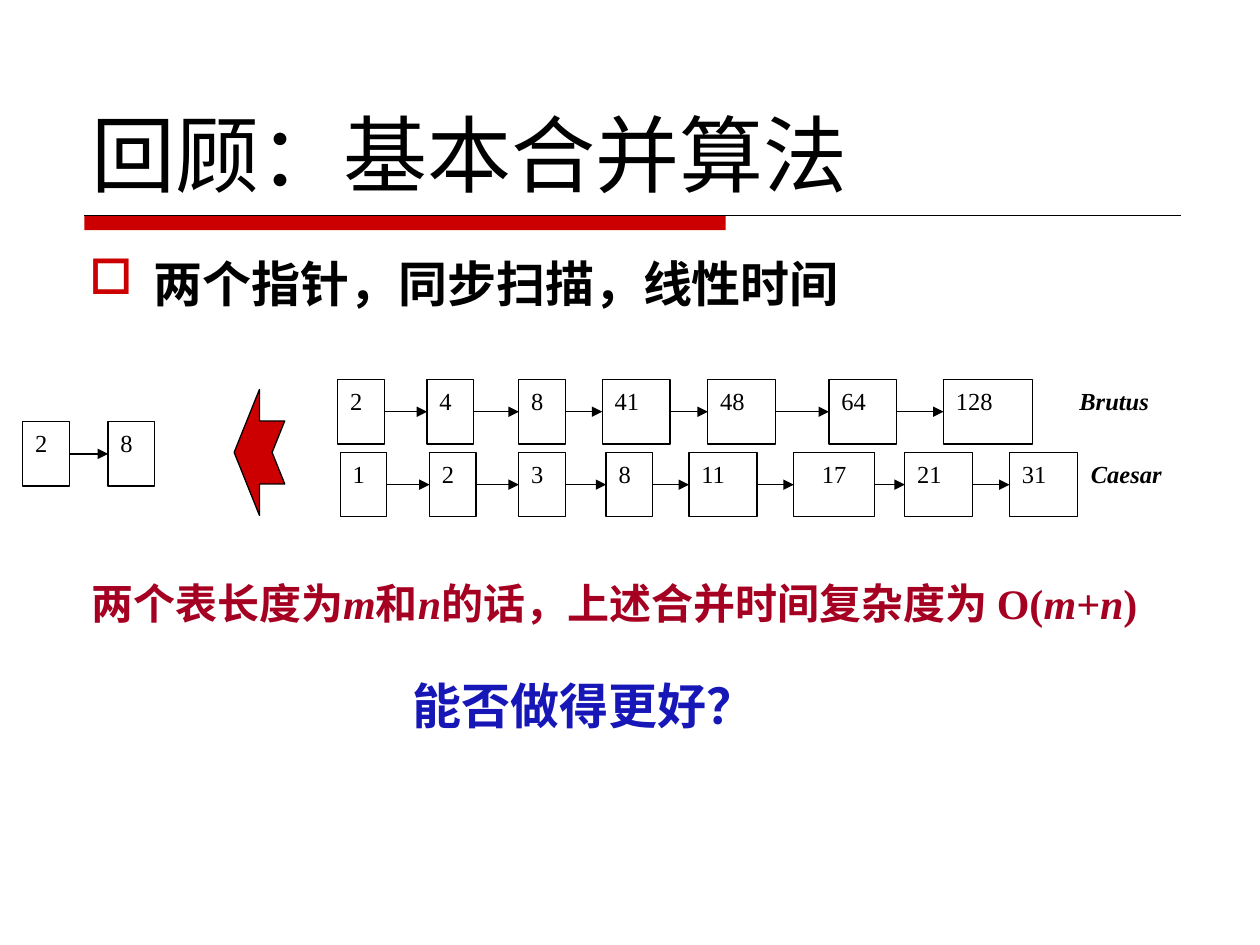
from lxml.etree import SubElement
from pptx import Presentation
from pptx.dml.color import RGBColor
from pptx.enum.shapes import MSO_CONNECTOR as CONN, MSO_SHAPE as SHAPE
from pptx.enum.text import MSO_ANCHOR as ANCHOR, PP_ALIGN as ALIGN
from pptx.oxml.ns import qn
from pptx.util import Cm, Pt

SANS, SERIF = "DejaVu Sans", "Times New Roman"
BLACK, RED, CRIMSON, BLUE = "000000", "CC0000", "A50021", "1717B7"
NODE_H = 1.3
NARROW, MEDIUM, WIDE = 0.94, 1.37, 1.8


def color(hex_value):
    return RGBColor.from_string(hex_value)


def write(tf, runs, size, font=SERIF, fill=BLACK, bold=False, align=ALIGN.LEFT):
    """Fill the first paragraph with (text, italic) runs."""
    tf.word_wrap = True
    p = tf.paragraphs[0]
    p.alignment = align
    for text, italic in runs:
        r = p.add_run()
        r.text = text
        f = r.font
        f.name, f.size, f.bold, f.italic = font, Pt(size), bold, italic
        f.color.rgb = color(fill)
    return p


def add_text(s, box, runs, size, anchor=ANCHOR.TOP, **style):
    tf = s.shapes.add_textbox(*map(Cm, box)).text_frame
    tf.vertical_anchor = anchor
    return write(tf, runs, size, **style)


def add_box(s, kind, box, fill=None, line=BLACK):
    sp = s.shapes.add_shape(kind, *map(Cm, box))
    sp.shadow.inherit = False
    if fill:
        sp.fill.solid()
        sp.fill.fore_color.rgb = color(fill)
    else:
        sp.fill.background()
    if line:
        sp.line.color.rgb = color(line)
        sp.line.width = Pt(0.75)
    else:
        sp.line.fill.background()
    return sp


def add_line(s, x1, y1, x2, y2, width=0.75):
    cxn = s.shapes.add_connector(CONN.STRAIGHT, x1, y1, x2, y2)
    cxn.line.color.rgb = color(BLACK)
    cxn.line.width = Pt(width)
    SubElement(cxn._element.spPr, qn("a:effectLst"))
    return cxn


def link(s, a, b):
    """Join two neighbouring nodes with an arrow."""
    cxn = add_line(s, 0, 0, 0, 0)
    cxn.begin_connect(a, 3)
    cxn.end_connect(b, 1)
    SubElement(cxn.line._get_or_add_ln(), qn("a:tailEnd"), type="triangle")


def add_title(s, left, top, width, height):
    add_text(s, (left, top, width, height), [("回顾：基本合并算法", False)], 48,
             anchor=ANCHOR.BOTTOM, font=SANS)
    rule_x, rule_y = left + 0.1, top + 3.5
    add_box(s, SHAPE.RECTANGLE, (rule_x, rule_y, 12.93, 0.3), RED, None)
    add_line(s, Cm(rule_x), Cm(rule_y), Cm(rule_x + 22.1), Cm(rule_y), 0.5)


def add_bullet(s, box):
    p = add_text(s, box, [("两个指针，同步扫描，线性时间", False)], 28,
                 font=SANS, bold=True)
    p.space_before = Pt(5.6)
    pPr = p._p.get_or_add_pPr()
    pPr.set("marL", str(Cm(1.3)))
    pPr.set("indent", str(-Cm(1.3)))
    SubElement(SubElement(pPr, qn("a:buClr")), qn("a:srgbClr"), val=RED)
    SubElement(pPr, qn("a:buChar"), char="□")


def add_list(s, left, top, nodes, label=None):
    """Draw a linked list of (offset, width, value) nodes."""
    previous = None
    for offset, width, value in nodes:
        sp = add_box(s, SHAPE.RECTANGLE, (left + offset, top, width, NODE_H))
        sp.text_frame.vertical_anchor = ANCHOR.TOP
        align = ALIGN.CENTER if value == 17 else ALIGN.LEFT
        write(sp.text_frame, [(str(value), False)], 14, align=align)
        if previous is not None:
            link(s, previous, sp)
        previous = sp
    if label:
        text, offset = label
        add_text(s, (left + offset, top, 2.95, NODE_H), [(text, True)], 14, bold=True)


def add_merge(s, left, top):
    """Two posting lists on the right, merged into the short one on the left."""
    add_list(s, left + 6.35, top, [
        (0, NARROW, 2), (1.8, NARROW, 4), (3.65, NARROW, 8), (5.33, MEDIUM, 41),
        (7.46, MEDIUM, 48), (9.9, MEDIUM, 64), (12.21, WIDE, 128)], ("Brutus", 14.7))
    add_list(s, left + 6.4, top + 1.47, [
        (0, NARROW, 1), (1.8, NARROW, 2), (3.6, NARROW, 3), (5.36, NARROW, 8),
        (7.03, MEDIUM, 11), (9.14, 1.63, 17), (11.38, MEDIUM, 21),
        (13.49, MEDIUM, 31)], ("Caesar", 14.88))
    arrow = add_box(s, SHAPE.NOTCHED_RIGHT_ARROW,
                    (left + 4.26, top + 0.2, 1.02, 2.54), RED)
    arrow.rotation = 180
    add_list(s, left, top + 0.85, [(0, NARROW, 2), (1.72, NARROW, 8)])


def add_conclusion(s, left, top, width):
    add_text(s, (left, top, width, 2.06), [
        ("两个表长度为", False), ("m", True), ("和", False), ("n", True),
        ("的话，上述合并时间复杂度为 O(", False), ("m+n", True), (")", False)],
        24, fill=CRIMSON, bold=True, align=ALIGN.CENTER)
    add_text(s, (left + 6.67, top + 1.98, 9, 1.45), [("能否做得更好？", False)],
             28, fill=BLUE, bold=True)


def main():
    prs = Presentation()
    prs.slide_width, prs.slide_height = Cm(25.4), Cm(19.05)
    s = prs.slides.add_slide(prs.slide_layouts[6])
    add_title(s, 1.6, 0.84, 22.22, 3.38)
    add_bullet(s, (1.55, 4.98, 22.22, 11.86))
    add_merge(s, 0.46, 7.65)
    add_conclusion(s, 1.4, 11.51, 21.97)
    prs.save("out.pptx")


if __name__ == "__main__":
    main()
